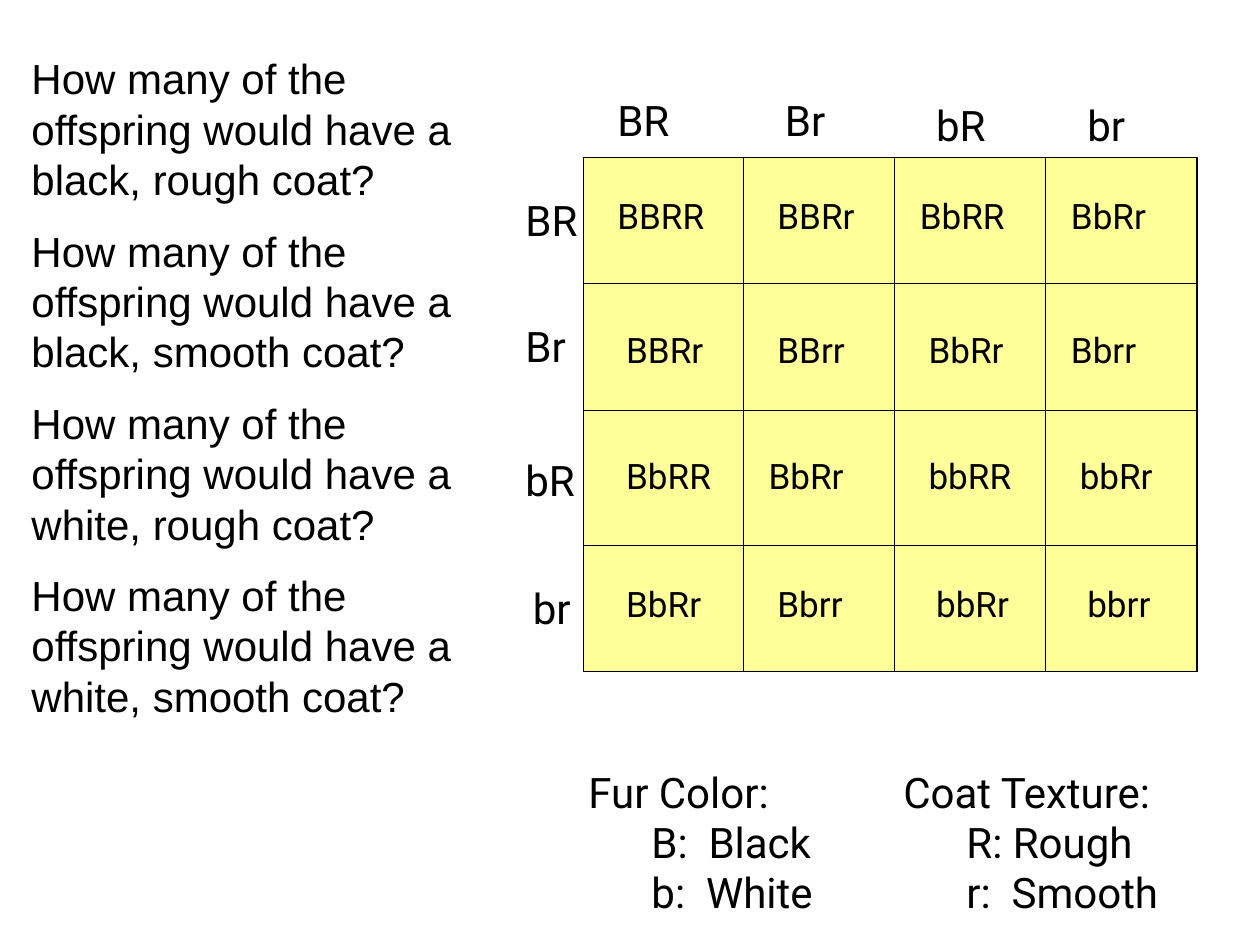
from pptx import Presentation
from pptx.dml.color import RGBColor
from pptx.enum.shapes import MSO_CONNECTOR, MSO_SHAPE
from pptx.oxml.ns import qn
from pptx.util import Inches, Pt
from lxml.etree import SubElement

# Content: text with its left edge; rows also have a top
COLUMN_HEADS = [("BR", 4.9, 0.75), ("Br", 6.23, 0.75), ("bR", 7.43, 0.79), ("br", 8.63, 0.79)]
ROWS = [
    (1.54, ("BR", 4.17), [("BBRR", 4.9), ("BBRr", 6.17), ("BbRR", 7.3), ("BbRr", 8.5)]),
    (2.54, ("Br", 4.17), [("BBRr", 4.97), ("BBrr", 6.17), ("BbRr", 7.37), ("Bbrr", 8.5)]),
    (3.61, ("bR", 4.17), [("BbRR", 4.97), ("BbRr", 6.1), ("bbRR", 7.37), ("bbRr", 8.57)]),
    (4.62, ("br", 4.23), [("BbRr", 4.97), ("Bbrr", 6.17), ("bbRr", 7.43), ("bbrr", 8.63)]),
]
CELL_TOPS = [1.54, 2.61, 3.61, 4.62]
COATS = ["black, rough", "black, smooth", "white, rough", "white, smooth"]
QUESTIONS = [f"How many of the offspring would have a {coat} coat?" for coat in COATS]
LEGENDS = [
    (4.67, "Fur Color:\v\tB:  Black\v\tb:  White"),
    (7.17, "Coat Texture:\v\tR: Rough\v\tr:  Smooth"),
]

# Punnett square edges and inner lines
LEFT, TOP, RIGHT, BOTTOM = 4.63, 1.25, 9.5, 5.33
INNER_X = [5.9, 7.1, 8.3]
INNER_Y = [2.25, 3.26, 4.33]


def color(value):
    return RGBColor.from_string(value)


def add_text(s, paragraphs, x, y, w, h, size=24, font="Roboto", wrap=True):
    tf = s.shapes.add_textbox(Inches(x), Inches(y), Inches(w), Inches(h)).text_frame
    tf.word_wrap = wrap
    tf.margin_left = tf.margin_right = tf.margin_top = tf.margin_bottom = 0
    for i, text in enumerate(paragraphs):
        p = tf.paragraphs[0] if i == 0 else tf.add_paragraph()
        p.text = text
        p.font.size, p.font.name = Pt(size), font
        p.font.color.rgb = color("000000")
        p.line_spacing = Pt(size * 1.2)
        p.space_before = Pt(size / 2 if i else 0)


def add_line(s, x1, y1, x2, y2):
    line = s.shapes.add_connector(
        MSO_CONNECTOR.STRAIGHT, Inches(x1), Inches(y1), Inches(x2), Inches(y2))
    line.line.color.rgb = color("000000")
    line.line.width = Pt(0.75)
    SubElement(line._element.spPr, qn("a:effectLst"))


prs = Presentation()
prs.slide_width, prs.slide_height = Inches(10), Inches(7.5)
s = prs.slides.add_slide(prs.slide_layouts[6])

# Square and grid lines
square = s.shapes.add_shape(MSO_SHAPE.RECTANGLE, Inches(LEFT), Inches(TOP),
                            Inches(RIGHT - LEFT), Inches(BOTTOM - TOP))
square.shadow.inherit = False
square.fill.solid()
square.fill.fore_color.rgb = color("FFFF99")
square.line.color.rgb = color("000000")
square.line.width = Pt(0.75)
for y in INNER_Y:
    add_line(s, LEFT, y, RIGHT, y)
for x in INNER_X:
    add_line(s, x, TOP, x, BOTTOM)

# Gametes and genotypes
for text, x, y in COLUMN_HEADS:
    add_text(s, [text], x, y, 0.47, 0.4, wrap=False)
for (head_top, (head, head_x), cells), cell_top in zip(ROWS, CELL_TOPS):
    add_text(s, [head], head_x, head_top, 0.47, 0.4, wrap=False)
    for text, x in cells:
        add_text(s, [text], x, cell_top, 0.73, 0.33, size=20, wrap=False)

# Questions and legends
add_text(s, QUESTIONS, 0.25, 0.42, 3.67, 5.99, font="Arial")
for x, text in LEGENDS:
    add_text(s, [text], x, 6.08, 2.58, 1.2)

prs.save("out.pptx")
